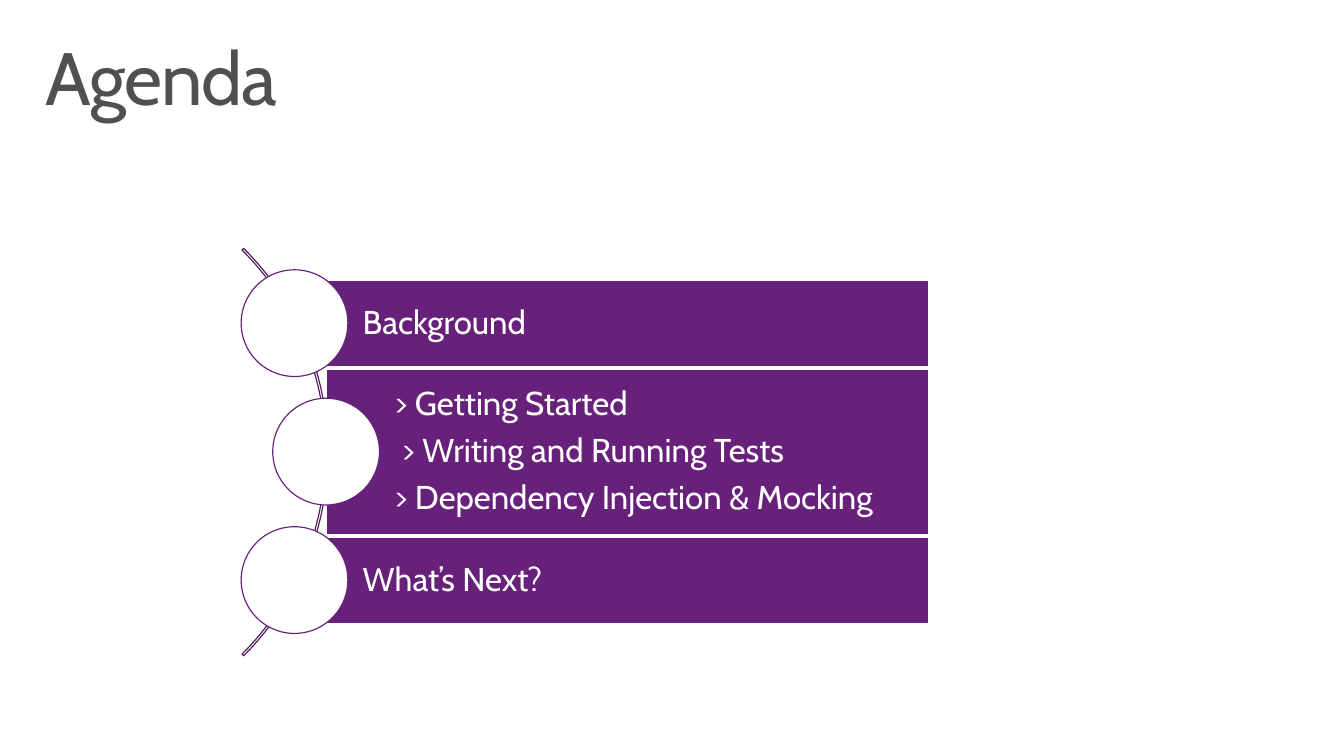
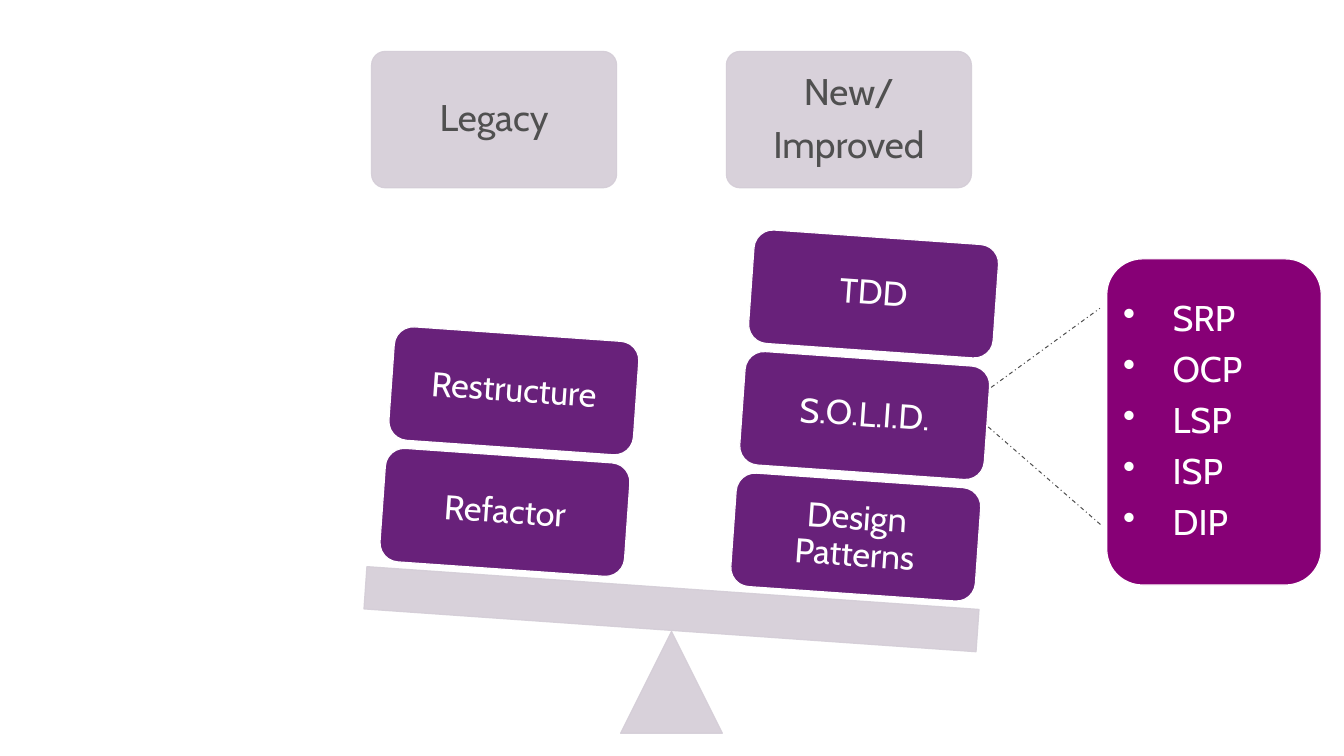
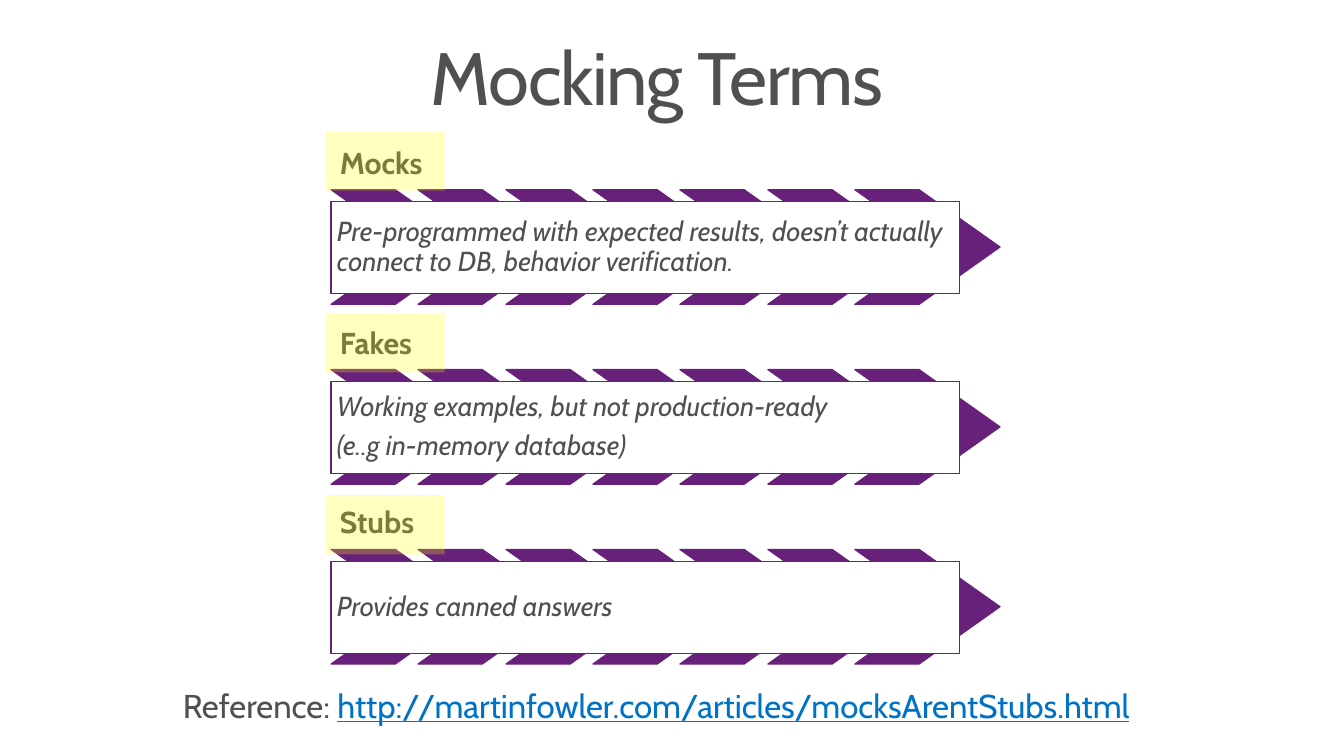
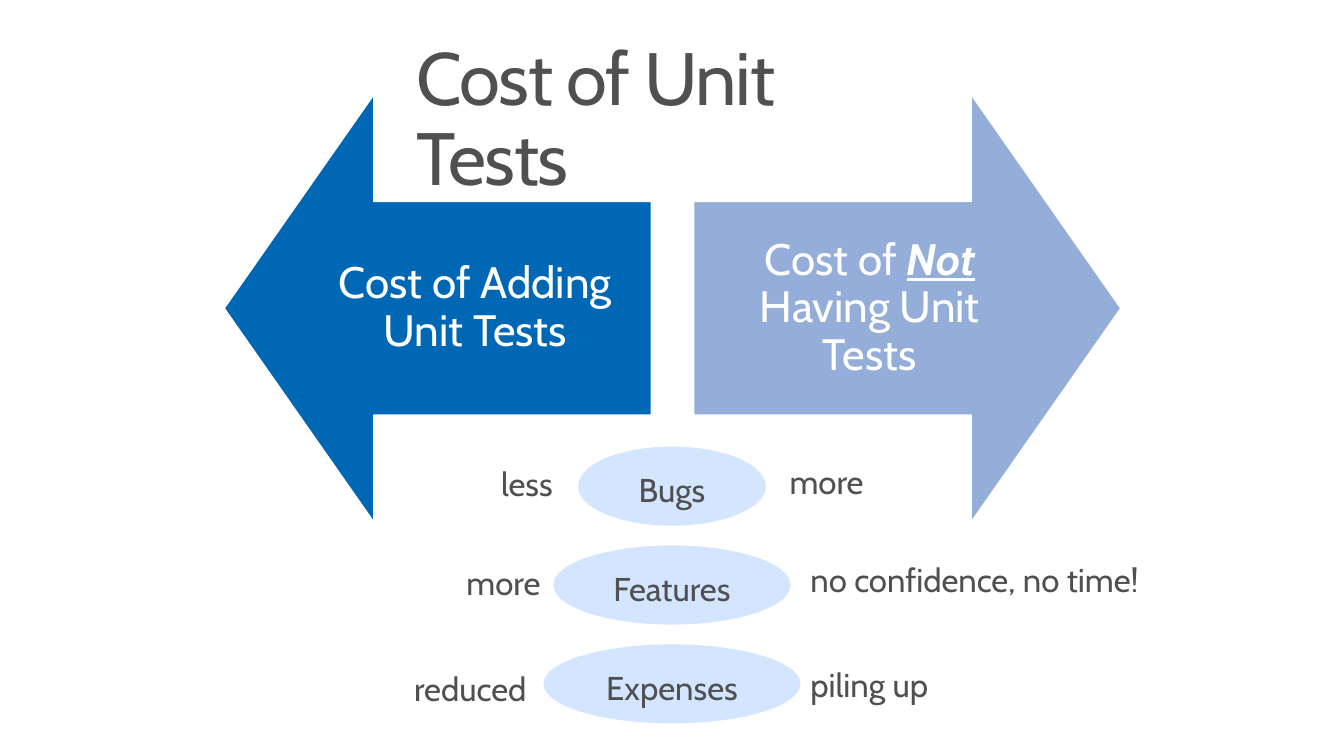
"""Build four slides about unit testing."""
from pptx import Presentation
from pptx import util as u
from pptx.dml.color import RGBColor
from pptx.enum import dml, shapes, text
from pptx.oxml.ns import qn

PX = 9144
FONT = "Cabin"
INK, WHITE, PURPLE, GREY = "505050", "FFFFFF", "68217A", "D4CDD7"
PLUM, MAGENTA, YELLOW = "531A62", "870076", "FFFF00"
BLUE, PERIWINKLE, PALE_BLUE, LINK = "0067B4", "95ADD9", "D4E5FF", "0072C6"
KIND = shapes.MSO_SHAPE
LEFT, CENTER = text.PP_ALIGN.LEFT, text.PP_ALIGN.CENTER
TOP, MIDDLE, BOTTOM = (text.MSO_ANCHOR.TOP, text.MSO_ANCHOR.MIDDLE,
                       text.MSO_ANCHOR.BOTTOM)
BULLET_INDENT = 50


def px(*lengths):
    """Turn lengths in px into EMU."""
    return [u.Emu(length * PX) for length in lengths]


def rgb(color):
    """Turn a hex string into a colour."""
    return RGBColor.from_string(color)


def apply(target, values):
    """Set each named attribute of the target."""
    for name, value in values.items():
        setattr(target, name, value)


def write(box, paras, size, color=INK, align=LEFT, anchor=MIDDLE,
          margins=(0, 0, 0, 0), after=0.35, bullet=None, spacing=None, **style):
    """Fill a shape with paragraphs, each a string or a list of (text, style)."""
    frame = box.text_frame
    sides = ("margin_left", "margin_top", "margin_right", "margin_bottom")
    apply(frame, dict(zip(sides, px(*margins)), word_wrap=True,
                      auto_size=text.MSO_AUTO_SIZE.NONE, vertical_anchor=anchor))
    for index, content in enumerate(paras):
        para = frame.add_paragraph() if index else frame.paragraphs[0]
        apply(para, {"alignment": align, "line_spacing": 0.9,
                     "space_before": u.Pt(0), "space_after": u.Pt(size * after)})
        if bullet:
            props = para._p.get_or_add_pPr()
            props.set("marL", str(BULLET_INDENT * PX))
            props.set("indent", str(-BULLET_INDENT * PX))
            props.makeelement(qn("a:buChar"), {"char": bullet})
            props.append(props.makeelement(qn("a:buChar"), {"char": bullet}))
        for words, extra in [(content, {})] if isinstance(content, str) else content:
            span = para.add_run()
            span.text = words
            look = {"name": FONT, "size": u.Pt(size), **style, **extra}
            span.font.color.rgb = rgb(look.pop("color", color))
            apply(span.font, look)
            if spacing:
                span._r.get_or_add_rPr().set("spc", str(spacing))


def add_box(page, kind, place, fill=None, line=None, adjust=(), alpha=None, turn=0):
    """Add a preset shape with its fill, outline, opacity and rotation."""
    box = page.shapes.add_shape(kind, *px(*place))
    box.shadow.inherit = False
    box.rotation = turn
    for index, value in enumerate(adjust):
        box.adjustments[index] = value
    for paint, color in ((box.fill, fill), (box.line.fill, line)):
        if color:
            paint.solid()
            paint.fore_color.rgb = rgb(color)
        else:
            paint.background()
    if line:
        box.line.width = u.Pt(0.85)
    if alpha:
        for color in box._element.spPr.iter(qn("a:srgbClr")):
            color.append(color.makeelement(qn("a:alpha"), {"val": str(alpha * 1000)}))
    return box


def add_text(page, place, paras, size, **style):
    """Add a text box."""
    write(page.shapes.add_textbox(*px(*place)), paras, size, **style)


def add_note(page, place, paras):
    """Add a loose line of body text."""
    add_text(page, place, paras, 24, anchor=TOP, margins=(20, 16, 20, 16), after=0.25)


def add_dashed_line(page, start, end):
    """Add a thin dash-dot line."""
    line = page.shapes.add_connector(shapes.MSO_CONNECTOR.STRAIGHT, *px(*start, *end))
    line.line.color.rgb = rgb(INK)
    apply(line.line, {"width": u.Pt(0.75), "dash_style": dml.MSO_LINE.DASH_DOT})
    props = line._element.spPr
    props.append(props.makeelement(qn("a:effectLst"), {}))


def add_page(deck, title=None, left=30, width=1300):
    """Add a slide, with a title if one is given."""
    page = deck.slides.add_slide(deck.slide_layouts[5 if title else 6])
    if title:
        head = page.shapes.title
        apply(head, dict(zip(("left", "top", "width", "height"),
                             px(left, 32, width, 100))))
        write(head, [title], 54, anchor=TOP, margins=(16, 10, 16, 10),
              after=0, spacing=-100)
    return page


def build_agenda(deck):
    """Build the agenda with three bars along an arc."""
    page = add_page(deck, "Agenda")
    add_box(page, KIND.BLOCK_ARC, (-251, 166, 583, 583), line=PLUM,
            adjust=(189, 27, 0.004))
    right, circle = 940, 108
    topics = [
        (298, 284, 87, ["Background"]),
        (330, 374, 167, ["> Getting Started", " > Writing and Running Tests",
                         "> Dependency Injection & Mocking"]),
        (298, 544, 87, ["What’s Next?"]),
    ]
    for left, top, height, paras in topics:
        bar = add_box(page, KIND.RECTANGLE, (left, top, right - left, height),
                      PURPLE, WHITE)
        write(bar, paras, 24, WHITE, margins=(69, 7, 7, 7))
        add_box(page, KIND.OVAL, (left - circle // 2, top + (height - circle) // 2,
                                  circle, circle), WHITE, PURPLE)


def build_balance(deck):
    """Build the seesaw of legacy and improved code."""
    page = add_page(deck)
    grey = {"fill": GREY, "line": GREY, "alpha": 90}
    for left, paras in ((376, ["Legacy"]), (735, ["New/", "Improved"])):
        label = add_box(page, KIND.ROUNDED_RECTANGLE, (left, 52, 248, 138),
                        adjust=(0.1,), **grey)
        write(label, paras, 27, align=CENTER, margins=(11,) * 4)
    add_box(page, KIND.ISOSCELES_TRIANGLE, (628, 639, 103, 103), **grey)
    add_box(page, KIND.RECTANGLE, (369, 595, 621, 43), turn=4, **grey)
    stacks = [(742, 486, ["Design Patterns", "S.O.L.I.D.", "TDD"]),
              (387, 461, ["Refactor", "Restructure"])]
    for left, top, names in stacks:
        for level, name in enumerate(names):
            block = add_box(page, KIND.ROUNDED_RECTANGLE,
                            (left + 9 * level, top - 123 * level, 248, 115),
                            PURPLE, WHITE, turn=4)
            write(block, [name], 25, WHITE, CENTER, margins=(10,) * 4)
    principles = add_box(page, KIND.ROUNDED_RECTANGLE, (1120, 262, 217, 330),
                         MAGENTA, WHITE)
    write(principles, ["SRP", "OCP", "LSP", "ISP", "DIP"], 26, WHITE,
          margins=(6, 6, 6, 6), bullet="•")
    add_dashed_line(page, (1003, 392), (1113, 312))
    add_dashed_line(page, (1000, 432), (1115, 532))


def build_terms(deck):
    """Build the three mocking terms on chevron bands."""
    page = add_page(deck, "Mocking Terms", 420, 520)
    terms = [
        ("Mocks", ["Pre-programmed with expected results, doesn’t actually "
                   "connect to DB, behavior verification."]),
        ("Fakes", ["Working examples, but not production-ready",
                   "(e..g in-memory database)"]),
        ("Stubs", ["Provides canned answers"]),
    ]
    left, pitch, chevrons, spread = 335, 182, 7, 530
    for row, (term, meaning) in enumerate(terms):
        drop = row * pitch
        add_text(page, (left, 135 + drop, 628, 57), [term], 22, anchor=BOTTOM,
                 margins=(9,) * 4, bold=True)
        for step in range(chevrons):
            shift = round(step * spread / (chevrons - 1))
            add_box(page, KIND.CHEVRON, (left + shift, 192 + drop, 147, 116),
                    PURPLE, PURPLE, adjust=(0.706,))
        panel = add_box(page, KIND.RECTANGLE, (left, 204 + drop, 636, 93),
                        WHITE, PURPLE)
        write(panel, meaning, 20, margins=(6,) * 4, italic=True)
    add_note(page, (165, 682, 1030, 69), [[
        ("Reference: ", {}),
        ("http://martinfowler.com/articles/mocksArentStubs.html",
         {"color": LINK, "underline": True})]])
    for row in range(len(terms)):
        add_box(page, KIND.RECTANGLE, (330, 133 + 184 * row, 120, 60), YELLOW, alpha=25)


def build_costs(deck):
    """Build the two opposing cost arrows and their effects."""
    page = add_page(deck, "Cost of Unit Tests", 405, 550)
    stress = {"bold": True, "italic": True, "underline": True}
    arrows = [
        (KIND.LEFT_ARROW, 227, BLUE, "Cost of Adding Unit Tests"),
        (KIND.RIGHT_ARROW, 702, PERIWINKLE,
         [("Cost of ", {}), ("Not", stress), (" Having Unit Tests", {})]),
    ]
    for kind, left, color, words in arrows:
        arrow = add_box(page, kind, (left, 96, 432, 432), color, WHITE,
                        adjust=(0.5, 0.35))
        write(arrow, [words], 32, WHITE, CENTER, margins=(25,) * 4)
    middle = 680
    for row, (name, width) in enumerate((("Bugs", 190), ("Features", 240),
                                         ("Expenses", 260))):
        oval = add_box(page, KIND.OVAL,
                       (middle - width // 2, 452 + 100 * row, width, 80), PALE_BLUE)
        write(oval, [name], 24, align=CENTER, anchor=TOP,
              margins=(20, 16, 20, 16), after=0)
    effects = [("less", 487, 458, 95), ("more", 779, 456, 118),
               ("more", 452, 558, 118), ("no confidence, no time!", 800, 555, 392),
               ("reduced", 399, 665, 161), ("piling up", 800, 661, 172)]
    for words, left, top, width in effects:
        add_note(page, (left, top, width, 69), [words])


def main():
    """Build and save the deck."""
    deck = Presentation()
    deck.slide_width, deck.slide_height = px(1360, 765)
    for build in (build_agenda, build_balance, build_terms, build_costs):
        build(deck)
    deck.save("out.pptx")


if __name__ == "__main__":
    main()
